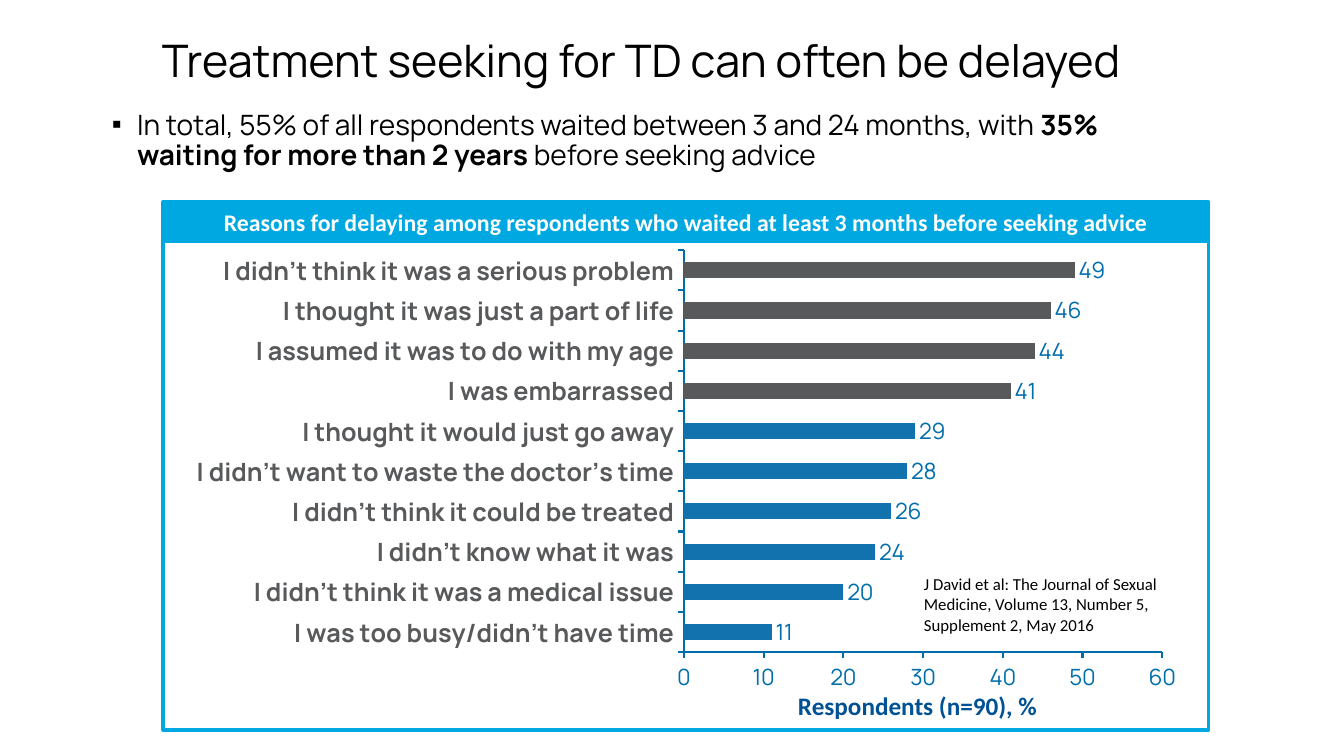
from lxml import etree
from pptx import Presentation
from pptx.chart.data import CategoryChartData
from pptx.dml.color import RGBColor
from pptx.enum.chart import XL_CHART_TYPE, XL_LABEL_POSITION, XL_TICK_MARK
from pptx.enum.shapes import MSO_SHAPE
from pptx.enum.text import MSO_ANCHOR, PP_ALIGN
from pptx.oxml import parse_xml
from pptx.oxml.ns import nsdecls, qn
from pptx.util import Pt

PX = 914400 / 100.8
COLORS = {
    "black": "000000", "white": "FFFFFF", "frame": "00A8E1", "axis": "006EAB",
    "bar": "1272AE", "top_bar": "58595B", "axis_title": "005294",
}


def box(left, top, width, height, fill=None):
    """Add a text box, or a framed rectangle when a fill is given."""
    place = [round(v * PX) for v in (left, top, width, height)]
    if fill is None:
        shape = slide.shapes.add_textbox(*place)
    else:
        shape = slide.shapes.add_shape(MSO_SHAPE.RECTANGLE, *place)
        shape.shadow.inherit = False
        shape.fill.solid()
        shape.fill.fore_color.rgb = RGBColor.from_string(COLORS[fill])
        shape.line.color.rgb = RGBColor.from_string(COLORS["frame"])
        shape.line.width = Pt(2.25)
    shape.text_frame.word_wrap = True
    return shape


def style(font, size, color, name="Manrope", bold=False):
    font.size, font.name, font.bold = Pt(size), name, bold
    font.color.rgb = RGBColor.from_string(COLORS[color])


prs = Presentation()
prs.slide_width, prs.slide_height = round(1344 * PX), round(756 * PX)
slide = prs.slides.add_slide(prs.slide_layouts[6])

# Title
title = box(35, 17, 1213, 92).text_frame
title.vertical_anchor = MSO_ANCHOR.MIDDLE
title.text = "Treatment seeking for TD can often be delayed"
title.paragraphs[0].alignment = PP_ALIGN.CENTER
title.paragraphs[0].line_spacing = 0.9
style(title.paragraphs[0].runs[0].font, 32, "black")

# Key finding with a square bullet
finding = box(102, 106, 1079, 100).text_frame.paragraphs[0]
finding.line_spacing = 0.9
indent = finding._p.get_or_add_pPr()
indent.set("marL", "228600")
indent.set("indent", "-228600")
etree.SubElement(indent, qn("a:buFont")).set("typeface", "Wingdings")
etree.SubElement(indent, qn("a:buChar")).set("char", "▪")
indent.find(qn("a:buFont")).set("typeface", "Arial")
for words, bold in (
    ("In total, 55% of all respondents waited between 3 and 24 months, with ", False),
    ("35% waiting for more than 2 years ", True),
    ("before seeking advice", False),
):
    run = finding.add_run()
    run.text = words
    style(run.font, 20, "black", bold=bold)

# Frame around the chart
box(163, 220, 1046, 510, "white")

# Reasons chart, listed from the bottom bar up
reasons = {
    "I was too busy/didn't have time": 11,
    "I didn't think it was a medical issue": 20,
    "I didn't know what it was": 24,
    "I didn't think it could be treated": 26,
    "I didn't want to waste the doctor's time": 28,
    "I thought it would just go away": 29,
    "I was embarrassed": 41,
    "I assumed it was to do with my age": 44,
    "I thought it was just a part of life": 46,
    "I didn't think it was a serious problem": 49,
}
data = CategoryChartData()
data.categories = list(reasons)
data.add_series("Series 1", list(reasons.values()))
chart = slide.shapes.add_chart(
    XL_CHART_TYPE.BAR_CLUSTERED,
    *[round(v * PX) for v in (176, 241, 1020, 460)], data).chart
chart.has_legend = False
chart.has_title = False
style(chart.font, 18, "axis")

# Plot area, measured in px inside the chart
chart._chartSpace.chart.plotArea.insert(0, parse_xml(
    f'<c:layout {nsdecls("c")}><c:manualLayout><c:layoutTarget val="inner"/>'
    '<c:xMode val="edge"/><c:yMode val="edge"/>'
    f'<c:x val="{508 / 1020:.3f}"/><c:y val="{9 / 460:.3f}"/>'
    f'<c:w val="{478 / 1020:.3f}"/><c:h val="{402 / 460:.3f}"/>'
    '</c:manualLayout></c:layout>'))
for spare in chart._chartSpace.chart.plotArea.findall(qn("c:layout"))[1:]:
    chart._chartSpace.chart.plotArea.remove(spare)

# Axes
for axis in (chart.category_axis, chart.value_axis):
    axis.has_major_gridlines = False
    axis.major_tick_mark = XL_TICK_MARK.OUTSIDE
    axis.minor_tick_mark = XL_TICK_MARK.NONE
    axis.format.line.color.rgb = RGBColor.from_string(COLORS["axis"])
    axis.format.line.width = Pt(1.5)
style(chart.category_axis.tick_labels.font, 18, "top_bar", bold=True)
style(chart.value_axis.tick_labels.font, 16, "axis")
chart.value_axis.minimum_scale = 0
chart.value_axis.maximum_scale = 60
chart.value_axis.major_unit = 10

# Bars and their values; reasons above 40 % stand out
bars = chart.plots[0]
bars.gap_width = 150
bars.vary_by_categories = False
bars.has_data_labels = True
bars.data_labels.show_value = True
bars.data_labels.position = XL_LABEL_POSITION.OUTSIDE_END
style(bars.data_labels.font, 16, "axis")
series = bars.series[0]
series.format.fill.solid()
series.format.fill.fore_color.rgb = RGBColor.from_string(COLORS["bar"])
for index, share in enumerate(reasons.values()):
    if share > 40:
        fill = series.points[index].format.fill
        fill.solid()
        fill.fore_color.rgb = RGBColor.from_string(COLORS["top_bar"])

# Axis title, chart heading and source
axis_title = box(777, 685, 281, 40)
axis_title.text_frame.word_wrap = False
heading = box(163, 202, 1046, 39, "frame")
heading.text_frame.vertical_anchor = MSO_ANCHOR.MIDDLE
citation = box(914, 569, 266, 72)
for label, words, size, color, bold, align in (
    (axis_title, "Respondents (n=90), %", 18, "axis_title", True, PP_ALIGN.CENTER),
    (heading, "Reasons for delaying among respondents who waited at least "
     "3 months before seeking advice", 17, "white", True, PP_ALIGN.CENTER),
    (citation, "J David et al: The Journal of Sexual Medicine, Volume 13, "
     "Number 5, Supplement 2, May 2016", 12, "black", False, PP_ALIGN.LEFT),
):
    paragraph = label.text_frame.paragraphs[0]
    paragraph.text = words
    paragraph.alignment = align
    style(paragraph.runs[0].font, size, color, "Calibri", bold)

prs.save("out.pptx")
